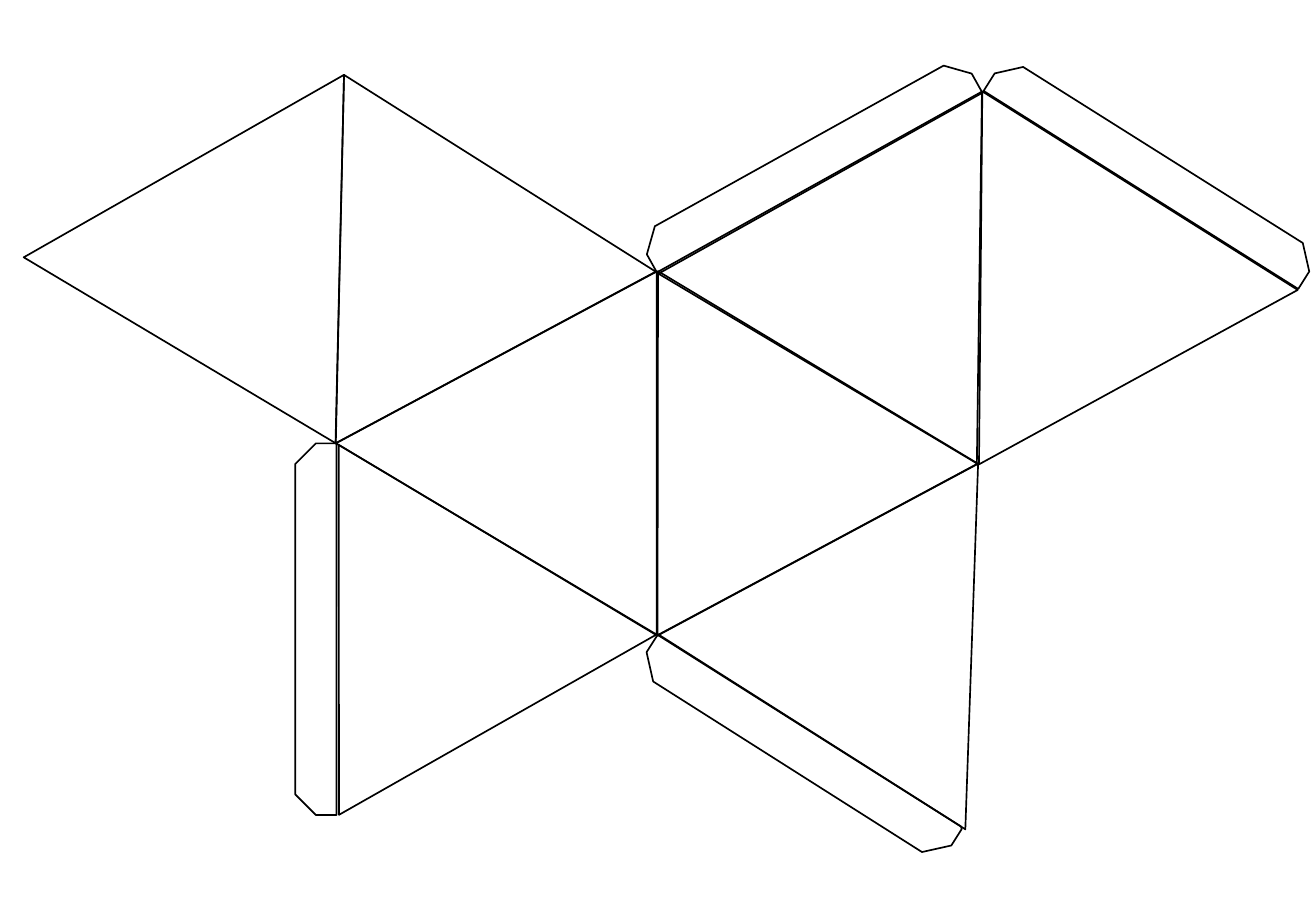
import pptx
import pptx.util
import pptx.dml.color
import pptx.enum.shapes

Inches = pptx.util.Inches
Shape = pptx.enum.shapes.MSO_SHAPE


def colour(value):
    return pptx.dml.color.RGBColor.from_string(value)


deck = pptx.Presentation()
deck.slide_width = Inches(10.83)
deck.slide_height = Inches(7.5)
page = deck.slides.add_slide(deck.slide_layouts[6])
net = page.shapes.add_group_shape()

faces = [
    (0.66, 0.43, 2.99, 2.64, 30.8, [0.5]),
    (1.96, 0.46, 2.99, 2.64, 331.8, [0.5]),
    (2.59, 2.41, 2.99, 2.64, 270, [0.527]),
    (1.94, 3.49, 3, 2.65, 330.4, [0.501]),
    (4.61, 2.04, 2.99, 2.64, 331.8, [0.475]),
    (5.88, 3.63, 2.99, 2.6, 32.3, [0.492]),
    (5.88, 0.58, 3.05, 2.64, 30.8, [0.5]),
    (7.23, 0.59, 2.99, 2.68, 331.3, [0.501]),
]
glue_tabs = [
    (1.07, 5.01, 3.06, 0.34, 270, [0.5, 0]),
    (5.09, 5.99, 2.97, 0.35, 212.4, [0.5, 0.046]),
    (5.13, 1.18, 3.06, 0.34, 330.9, [0.5, 0]),
    (7.95, 1.25, 3.06, 0.34, 32.2, [0.5, 0]),
]

for kind, pieces in (
    (Shape.ISOSCELES_TRIANGLE, faces),
    (Shape.SNIP_2_SAME_RECTANGLE, glue_tabs),
):
    for left, top, width, height, angle, adjustments in pieces:
        piece = net.shapes.add_shape(
            kind, Inches(left), Inches(top), Inches(width), Inches(height)
        )
        piece.rotation = angle
        for index, value in enumerate(adjustments):
            piece.adjustments[index] = value
        piece.shadow.inherit = False
        piece.fill.background()
        piece.line.color.rgb = colour("000000")
        piece.line.width = pptx.util.Pt(1)

deck.save("out.pptx")
